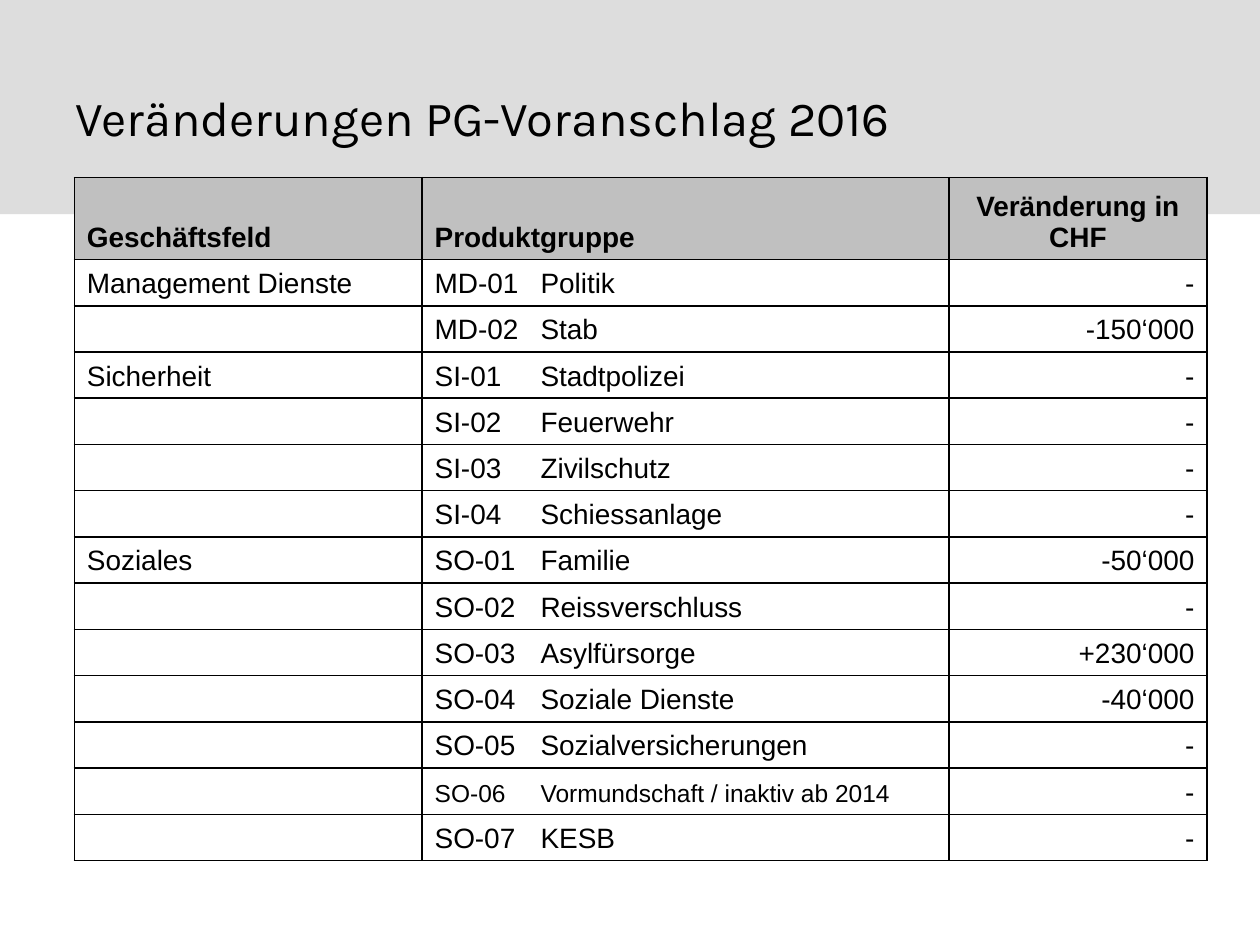
from dataclasses import dataclass

from lxml import etree
from pptx import Presentation
from pptx import util as u
from pptx.dml.color import RGBColor
from pptx.enum import shapes, text
from pptx.oxml.ns import qn


@dataclass(frozen=True)
class Theme:
    ink: str = "000000"
    band: str = "DDDDDD"
    header: str = "C0C0C0"
    title_font: str = "Karla"
    body_font: str = "Arial"
    title_size: int = 28
    body_size: int = 16
    small_size: int = 14
    border: int = 1
    code_tab: float = 0.84


LEFT = text.PP_ALIGN.LEFT
CENTER = text.PP_ALIGN.CENTER
RIGHT = text.PP_ALIGN.RIGHT

COLUMNS = [2.76, 4.18, 2.05]
HEADER_HEIGHT = 0.65
ROW_HEIGHT = 0.366
HEADINGS = ["Geschäftsfeld", "Produktgruppe", "Veränderung in CHF"]
FIELDS = {
    "Management Dienste": [
        ("MD-01", "Politik", "-"),
        ("MD-02", "Stab", "-150‘000"),
    ],
    "Sicherheit": [
        ("SI-01", "Stadtpolizei", "-"),
        ("SI-02", "Feuerwehr", "-"),
        ("SI-03", "Zivilschutz", "-"),
        ("SI-04", "Schiessanlage", "-"),
    ],
    "Soziales": [
        ("SO-01", "Familie", "-50‘000"),
        ("SO-02", "Reissverschluss", "-"),
        ("SO-03", "Asylfürsorge", "+230‘000"),
        ("SO-04", "Soziale Dienste", "-40‘000"),
        ("SO-05", "Sozialversicherungen", "-"),
        ("SO-06", "Vormundschaft / inaktiv ab 2014", "-"),
        ("SO-07", "KESB", "-"),
    ],
}
INACTIVE = "SO-06"


def write(frame, words, *, font, size, color, bold=False, align=LEFT, tab=None):
    para = frame.paragraphs[0]
    para.alignment = align
    if tab:
        stops = etree.SubElement(para._p.get_or_add_pPr(), qn("a:tabLst"))
        etree.SubElement(stops, qn("a:tab"), pos=str(u.Inches(tab)), algn="l")
    if not words:
        etree.SubElement(para._p, qn("a:endParaRPr"), sz=str(size * 100))
        return
    span = para.add_run()
    span.text = words
    span.font.name = font
    span.font.size = u.Pt(size)
    span.font.bold = bold
    span.font.color.rgb = RGBColor.from_string(color)


class Painter:
    def __init__(self, page, theme):
        self.page = page
        self.theme = theme

    def band(self, left, top, width, height):
        shape = self.page.shapes.add_shape(
            shapes.MSO_SHAPE.RECTANGLE, *map(u.Inches, (left, top, width, height)))
        shape.shadow.inherit = False
        shape.fill.solid()
        shape.fill.fore_color.rgb = RGBColor.from_string(self.theme.band)
        shape.line.fill.background()

    def title(self, words, left, top, width, height):
        box = self.page.shapes.add_textbox(*map(u.Inches, (left, top, width, height)))
        box.text_frame.word_wrap = True
        box.text_frame.vertical_anchor = text.MSO_ANCHOR.MIDDLE
        write(box.text_frame, words, font=self.theme.title_font,
              size=self.theme.title_size, color=self.theme.ink)

    def borders(self, cell):
        properties = cell._tc.get_or_add_tcPr()
        for side in ("lnL", "lnR", "lnT", "lnB"):
            line = etree.SubElement(
                properties, qn(f"a:{side}"), w=str(u.Pt(self.theme.border)))
            fill = etree.SubElement(line, qn("a:solidFill"))
            etree.SubElement(fill, qn("a:srgbClr"), val=self.theme.ink)

    def cell(self, cell, words, *, fill=None, **style):
        self.borders(cell)
        cell.vertical_anchor = text.MSO_ANCHOR.BOTTOM
        cell.margin_left = cell.margin_right = u.Inches(0.1)
        cell.margin_top = cell.margin_bottom = u.Inches(0.05)
        if fill:
            cell.fill.solid()
            cell.fill.fore_color.rgb = RGBColor.from_string(fill)
        else:
            cell.fill.background()
        style = {"size": self.theme.body_size, **style}
        write(cell.text_frame, words, font=self.theme.body_font,
              color=self.theme.ink, **style)

    def budget_table(self, left, top):
        theme = self.theme
        rows = [(field if index == 0 else "", *group)
                for field, groups in FIELDS.items()
                for index, group in enumerate(groups)]
        heights = [HEADER_HEIGHT] + [ROW_HEIGHT] * len(rows)
        table = self.page.shapes.add_table(
            len(heights), len(COLUMNS), u.Inches(left), u.Inches(top),
            u.Inches(sum(COLUMNS)), u.Inches(sum(heights))).table
        table.first_row = table.horz_banding = False
        for column, width in zip(table.columns, COLUMNS):
            column.width = u.Inches(width)
        for row, height in zip(table.rows, heights):
            row.height = u.Inches(height)

        for index, (words, align) in enumerate(zip(HEADINGS, (LEFT, LEFT, CENTER))):
            self.cell(table.cell(0, index), words, fill=theme.header,
                      bold=True, align=align)
        for index, (field, code, name, change) in enumerate(rows, 1):
            size = theme.small_size if code == INACTIVE else theme.body_size
            self.cell(table.cell(index, 0), field)
            self.cell(table.cell(index, 1), f"{code}\t{name}",
                      size=size, tab=theme.code_tab)
            self.cell(table.cell(index, 2), change, align=RIGHT)


def main():
    deck = Presentation()
    deck.slide_width = u.Inches(10)
    deck.slide_height = u.Inches(7.5)
    page = deck.slides.add_slide(deck.slide_layouts[6])
    painter = Painter(page, Theme())
    painter.band(0, 0, 10, 1.7)
    painter.title("Veränderungen PG-Voranschlag 2016", 0.5, 0.3, 9, 1.25)
    painter.budget_table(0.59, 1.41)
    deck.save("out.pptx")


if __name__ == "__main__":
    main()
